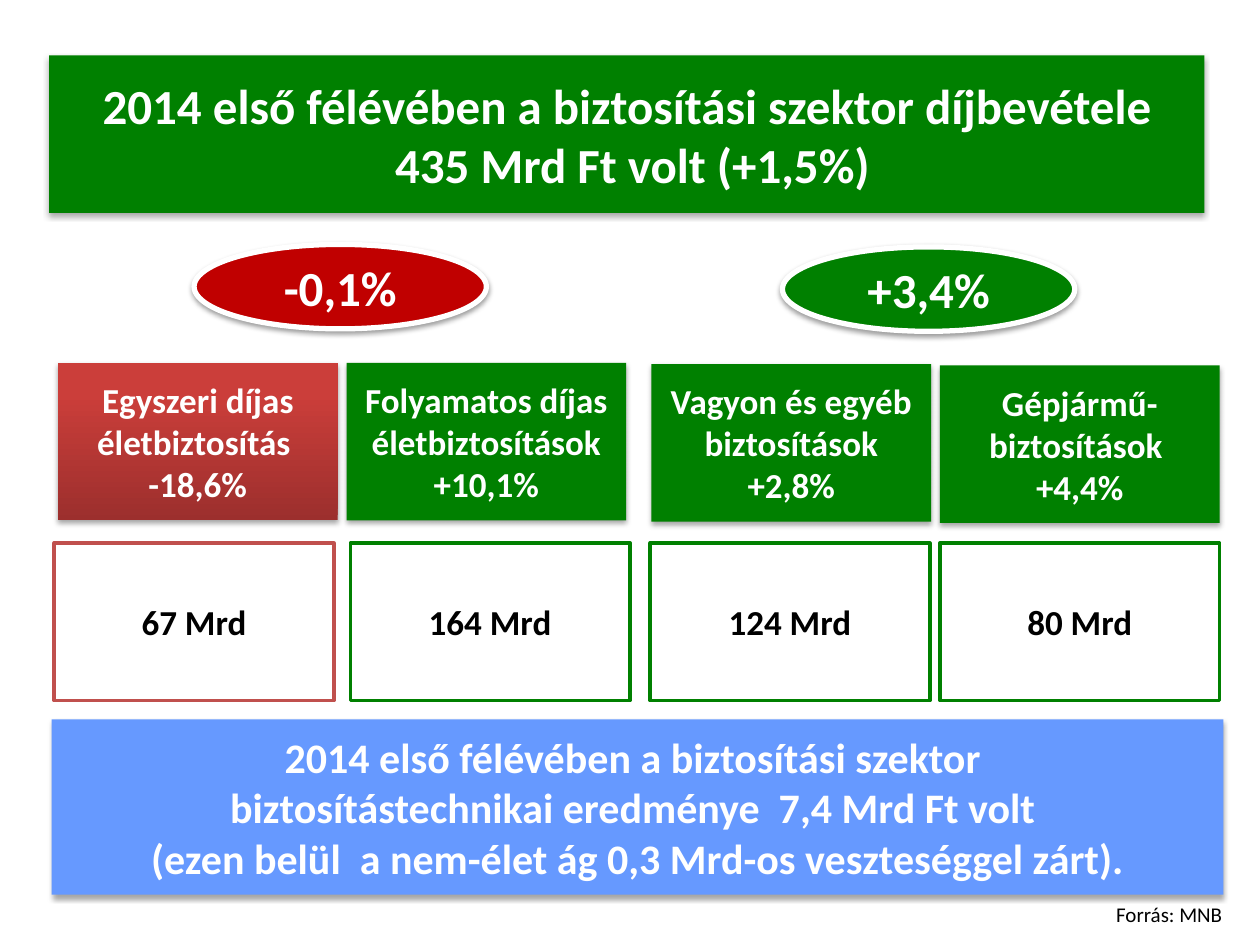
from lxml.etree import SubElement
from pptx import Presentation
from pptx.dml.color import RGBColor
from pptx.enum.shapes import MSO_SHAPE as Shape
from pptx.enum.text import MSO_ANCHOR as Anchor, PP_ALIGN as Align
from pptx.oxml.ns import qn
from pptx.util import Inches, Pt

COLORS = {
    "green": "008000", "red": "C00000", "blue": "6699FF",
    "rose": "C0504D", "dark": "9C2F2D", "bright": "CB3E3A",
    "white": "FFFFFF", "black": "000000",
}
CARD_W, CARD_H = 2.22, 1.25


def rgb(name):
    return RGBColor.from_string(COLORS[name])


def write(frame, text, size=20, color="white", bold=True, align=Align.CENTER, wrap=True):
    frame.word_wrap = wrap
    para = frame.paragraphs[0]
    para.text = text
    para.alignment = align
    for run in para.runs:
        font = run.font
        font.name, font.size, font.bold = "Calibri", Pt(size), bold
        font.color.rgb = rgb(color)


def cast(shape, alpha, dist):
    """Add a soft shadow falling straight down."""
    effects = shape._element.spPr.find(qn("a:effectLst"))
    outer = SubElement(effects, qn("a:outerShdw"), blurRad=str(Pt(3.1)),
                       dist=str(Pt(dist)), dir="5400000", rotWithShape="0")
    tint = SubElement(outer, qn("a:srgbClr"), val=COLORS["black"])
    SubElement(tint, qn("a:alpha"), val=str(alpha * 1000))


def block(slide, box, text, fill, kind=Shape.RECTANGLE, line=None, width=2,
          shade=None, **style):
    shape = slide.shapes.add_shape(kind, *map(Inches, box))
    shape.shadow.inherit = False
    if isinstance(fill, tuple):
        shape.fill.gradient()
        shape.fill.gradient_angle = 90
        for stop, name, pos in zip(shape.fill.gradient_stops, fill, (0, 0.8)):
            stop.color.rgb, stop.position = rgb(name), pos
    else:
        shape.fill.solid()
        shape.fill.fore_color.rgb = rgb(fill)
    if line:
        shape.line.color.rgb = rgb(line)
        shape.line.width = Pt(width)
    else:
        shape.line.fill.background()
    if shade:
        cast(shape, *shade)
    shape.text_frame.vertical_anchor = Anchor.MIDDLE
    write(shape.text_frame, text, **style)


def banner(slide, box, text, fill, size):
    block(slide, box, text, fill, shade=(35, 1.8), size=size)


def badge(slide, left, top, text, fill):
    block(slide, (left, top, 2.32, 0.67), text, fill, kind=Shape.OVAL,
          line="white", width=3, shade=(38, 1.6), size=28)


def head(slide, left, top, text, fill):
    block(slide, (left, top, CARD_W, CARD_H), text, fill, shade=(35, 1.8))


def amount(slide, left, top, text, line):
    block(slide, (left, top, CARD_W, CARD_H), text, "white", line=line, color="black")


def source(slide, box, text):
    area = slide.shapes.add_textbox(*map(Inches, box))
    write(area.text_frame, text, size=12, color="black", bold=False,
          align=Align.LEFT, wrap=False)


def main():
    deck = Presentation()
    deck.slide_width, deck.slide_height = Inches(10), Inches(7.5)
    slide = deck.slides.add_slide(deck.slide_layouts[6])

    banner(slide, (0.39, 0.44, 9.17, 1.25),
           "2014 első félévében a biztosítási szektor díjbevétele\n"
           " 435 Mrd Ft volt (+1,5%)", "green", 28)
    badge(slide, 1.54, 1.94, "-0,1%", "red")
    badge(slide, 6.21, 1.96, "+3,4%", "green")

    heads = [
        (0.46, 2.88, "Egyszeri díjas életbiztosítás \n-18,6%", ("dark", "bright")),
        (2.75, 2.88, "Folyamatos díjas\néletbiztosítások\n+10,1%", "green"),
        (5.17, 2.89, "Vagyon és egyéb\nbiztosítások\n+2,8%", "green"),
        (7.46, 2.9, "Gépjármű-biztosítások \n+4,4%", "green"),
    ]
    for item in heads:
        head(slide, *item)

    amounts = [
        (0.43, "67 Mrd", "rose"),
        (2.78, "164 Mrd", "green"),
        (5.16, "124 Mrd", "green"),
        (7.46, "80 Mrd", "green"),
    ]
    for left, text, line in amounts:
        amount(slide, left, 4.31, text, line)

    banner(slide, (0.41, 5.71, 9.3, 1.39),
           "2014 első félévében a biztosítási szektor \n"
           "biztosítástechnikai eredménye  7,4 Mrd Ft volt \n"
           "(ezen belül  a nem-élet ág 0,3 Mrd-os veszteséggel zárt).", "blue", 24)
    source(slide, (8.76, 7.11, 1.05, 0.3), "Forrás: MNB")
    deck.save("out.pptx")


if __name__ == "__main__":
    main()
